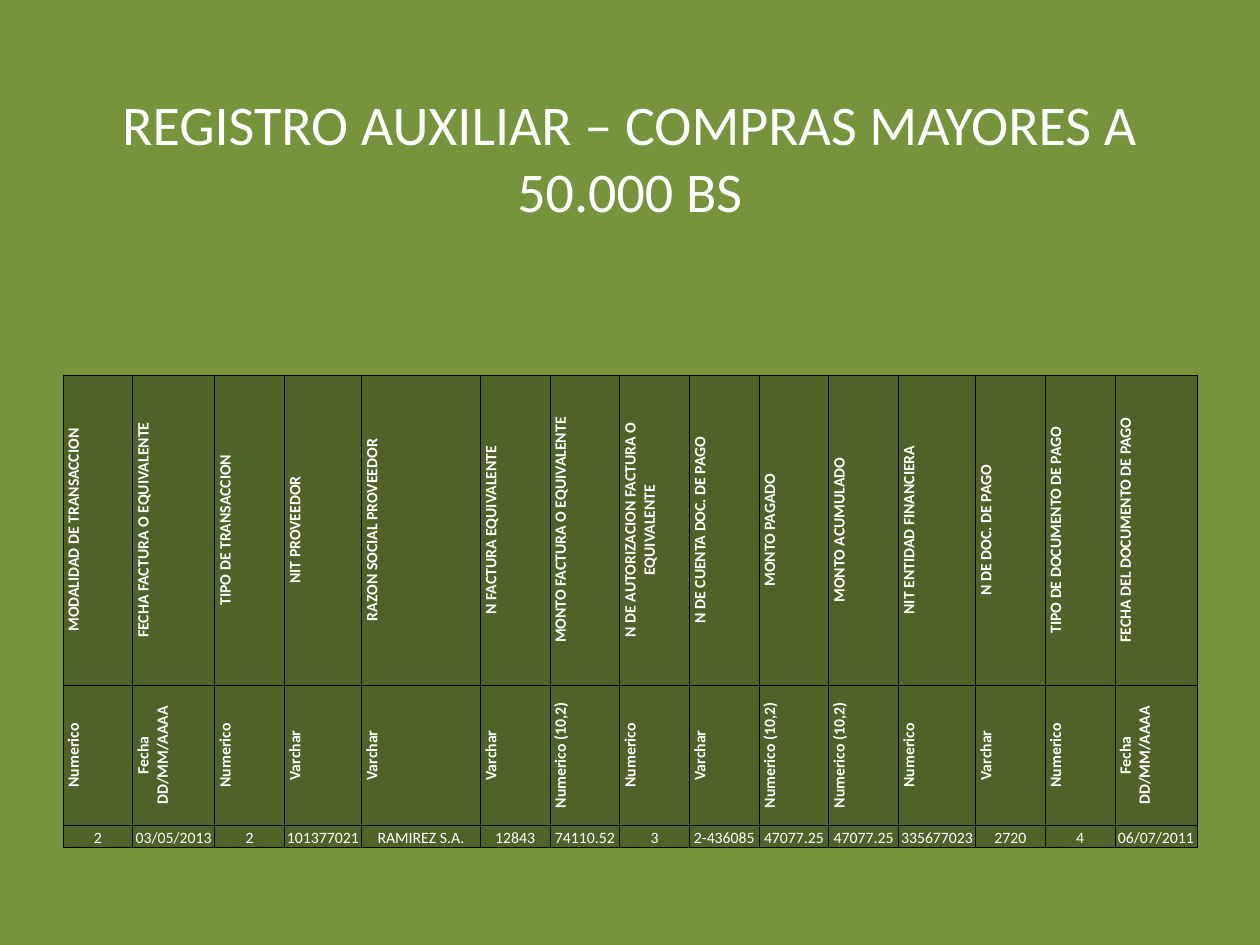
"""Builds the slide with the auxiliary register of purchases above 50.000 Bs."""
from dataclasses import dataclass

from lxml import etree
from pptx import Presentation
from pptx import util as u
from pptx.dml.color import RGBColor
from pptx.enum import text
from pptx.oxml import ns

TITLE = "REGISTRO AUXILIAR – COMPRAS MAYORES A 50.000 BS"
FIELDS = [
    ("MODALIDAD DE TRANSACCION", "Numerico", "2"),
    ("FECHA FACTURA O EQUIVALENTE", "Fecha DD/MM/AAAA", "03/05/2013"),
    ("TIPO DE TRANSACCION", "Numerico", "2"),
    ("NIT PROVEEDOR", "Varchar", "101377021"),
    ("RAZON SOCIAL PROVEEDOR", "Varchar", "RAMIREZ S.A."),
    ("N FACTURA EQUIVALENTE", "Varchar", "12843"),
    ("MONTO FACTURA O EQUIVALENTE", "Numerico (10,2)", "74110.52"),
    ("N DE AUTORIZACION FACTURA O EQUIVALENTE", "Numerico", "3"),
    ("N DE CUENTA DOC. DE PAGO", "Varchar", "2-436085"),
    ("MONTO PAGADO", "Numerico (10,2)", "47077.25"),
    ("MONTO ACUMULADO", "Numerico (10,2)", "47077.25"),
    ("NIT ENTIDAD FINANCIERA", "Numerico", "335677023"),
    ("N DE DOC. DE PAGO", "Varchar", "2720"),
    ("TIPO DE DOCUMENTO DE PAGO", "Numerico", "4"),
    ("FECHA DEL DOCUMENTO DE PAGO", "Fecha DD/MM/AAAA", "06/07/2011"),
]
WIDE_COLUMNS = {1: 82, 3: 77, 4: 119, 11: 77, 14: 82}
ROW_HEIGHTS = [185, 107, 22]
SLIDE_SIZE = (1260, 945)
TITLE_BOX = (63, 118, 1134, 77)
TABLE_BOX = (63, 375, 1134, sum(ROW_HEIGHTS))


@dataclass(frozen=True)
class Theme:
    background: str = "77933C"
    cell: str = "4F6228"
    ink: str = "FFFFFF"
    border: str = "000000"
    font: str = "Calibri"
    title_size: int = 32
    cell_size: int = 9
    border_width: float = 0.5


THEME = Theme()


def px(length):
    return u.Emu(round(length * 914400 / 126))


def paint(fill, color):
    fill.solid()
    fill.fore_color.rgb = RGBColor.from_string(color)


def write(frame, words, size, bold=False):
    frame.text = words
    paragraph = frame.paragraphs[0]
    paragraph.alignment = text.PP_ALIGN.CENTER
    font = paragraph.runs[0].font
    font.name, font.size, font.bold = THEME.font, u.Pt(size), bold
    font.color.rgb = RGBColor.from_string(THEME.ink)


def outline(properties):
    for side in ("lnL", "lnR", "lnT", "lnB"):
        line = etree.SubElement(properties, ns.qn(f"a:{side}"), w=str(u.Pt(THEME.border_width)))
        solid = etree.SubElement(line, ns.qn("a:solidFill"))
        etree.SubElement(solid, ns.qn("a:srgbClr"), val=THEME.border)


def add_title(slide):
    frame = slide.shapes.add_textbox(*map(px, TITLE_BOX)).text_frame
    frame.word_wrap = True
    frame.vertical_anchor = text.MSO_ANCHOR.MIDDLE
    write(frame, TITLE, THEME.title_size)


def fill_cell(cell, words, heading):
    cell.margin_left = cell.margin_right = cell.margin_top = px(1)
    cell.margin_bottom = 0
    cell.vertical_anchor = text.MSO_ANCHOR.MIDDLE if heading else text.MSO_ANCHOR.BOTTOM
    write(cell.text_frame, words, THEME.cell_size, heading)
    properties = cell._tc.get_or_add_tcPr()
    if heading:
        properties.set("vert", "vert270")
    outline(properties)
    paint(cell.fill, THEME.cell)


def add_register(slide):
    shape = slide.shapes.add_table(len(ROW_HEIGHTS), len(FIELDS), *map(px, TABLE_BOX))
    table = shape.table
    table.first_row = table.horz_banding = False
    regular = (TABLE_BOX[2] - sum(WIDE_COLUMNS.values())) / (len(FIELDS) - len(WIDE_COLUMNS))
    for row, height in zip(table.rows, ROW_HEIGHTS):
        row.height = px(height)
    for column, field in enumerate(FIELDS):
        table.columns[column].width = px(WIDE_COLUMNS.get(column, regular))
        for row, words in enumerate(field):
            fill_cell(table.cell(row, column), words, heading=row < 2)


def main():
    presentation = Presentation()
    presentation.slide_width, presentation.slide_height = map(px, SLIDE_SIZE)
    slide = presentation.slides.add_slide(presentation.slide_layouts[6])
    paint(slide.background.fill, THEME.background)
    add_title(slide)
    add_register(slide)
    presentation.save("out.pptx")


if __name__ == "__main__":
    main()
